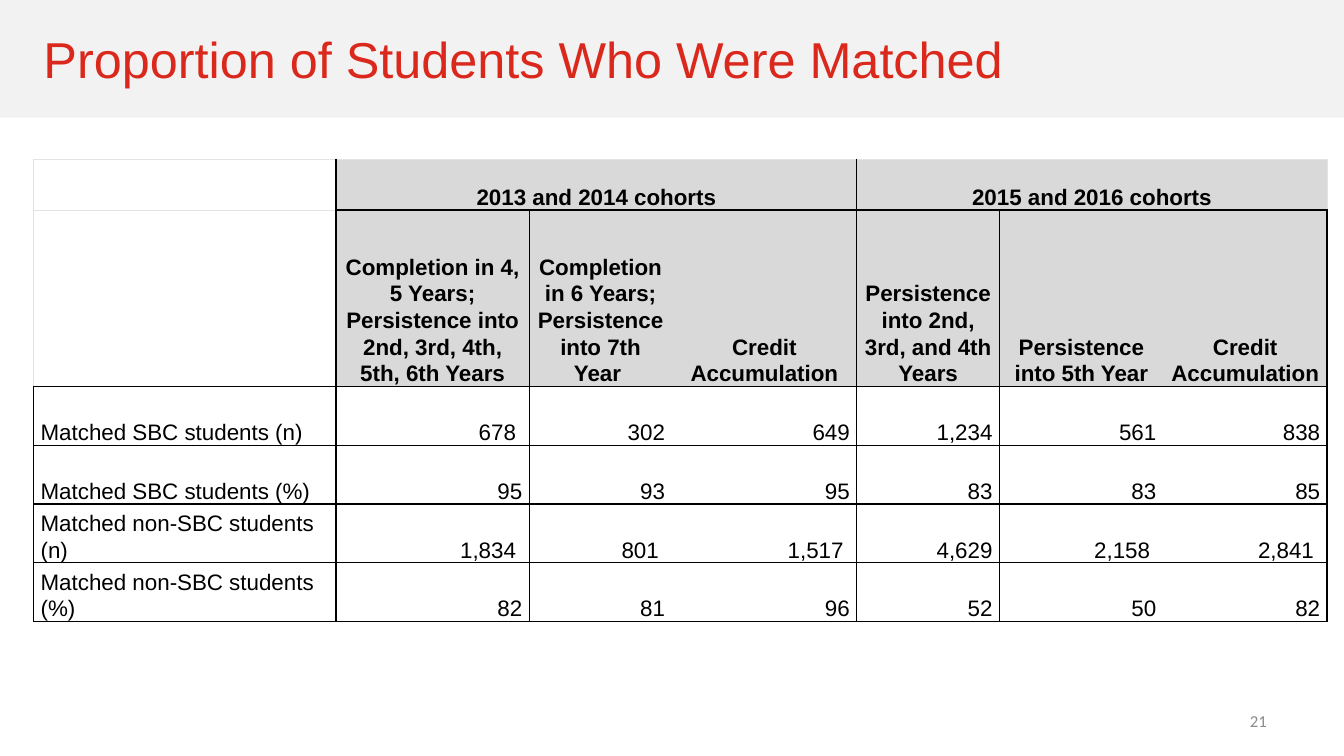
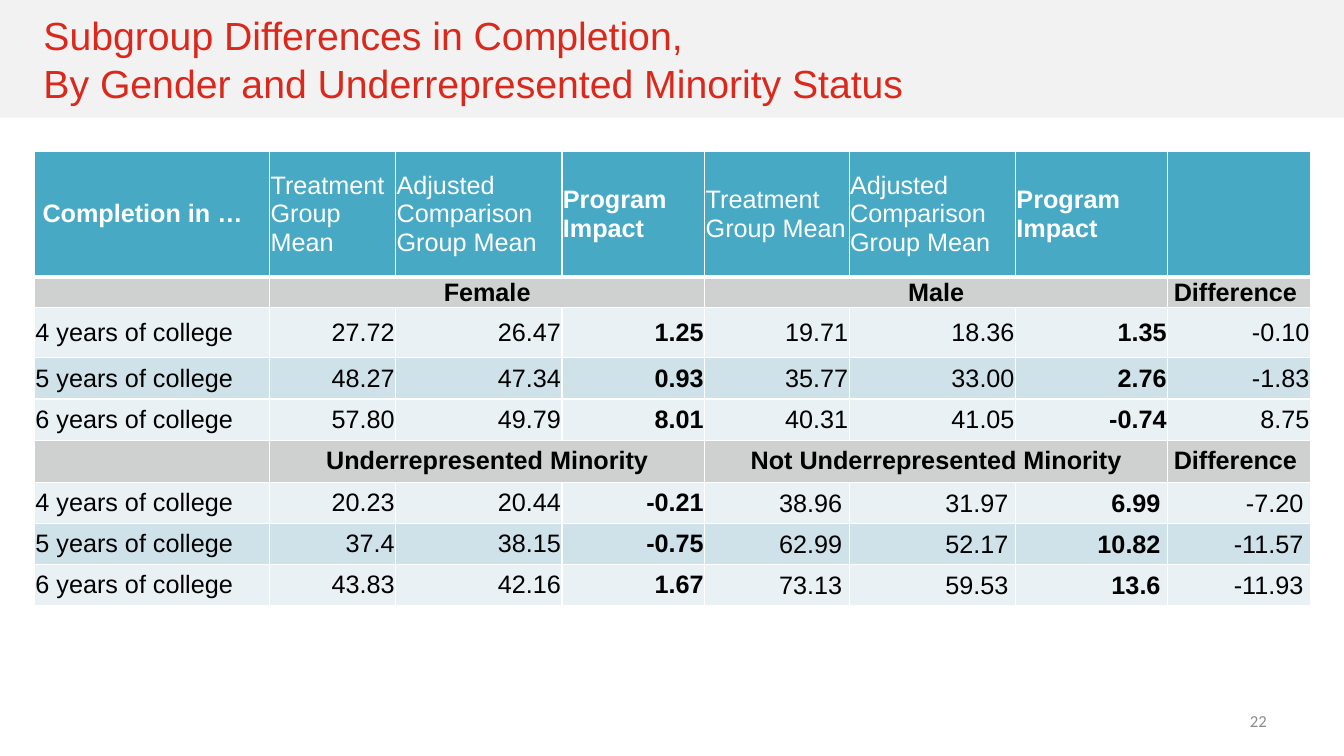
import lxml.etree
import pptx
import pptx.dml.color
import pptx.enum.shapes
import pptx.enum.text
import pptx.oxml.ns
import pptx.util

RGBColor = pptx.dml.color.RGBColor
ALIGN = pptx.enum.text.PP_ALIGN
ANCHOR = pptx.enum.text.MSO_ANCHOR

RED = RGBColor(0xDA, 0x29, 0x1C)
TEAL = RGBColor(0x48, 0xA9, 0xC5)
BLACK = RGBColor(0, 0, 0)
WHITE = RGBColor(0xFF, 0xFF, 0xFF)
BAND_GRAY = RGBColor(0xF2, 0xF2, 0xF2)
HEADER_GRAY = RGBColor(0xD9, 0xD9, 0xD9)
SECTION_GRAY = RGBColor(0xCF, 0xD1, 0xD1)
LINE_GRAY = RGBColor(0xE2, 0xE3, 0xE3)
NUMBER_GRAY = RGBColor(0x8C, 0x8C, 0x8C)
PALE_BLUE = RGBColor(0xE9, 0xF1, 0xF5)
SOFT_BLUE = RGBColor(0xCF, 0xE2, 0xEA)

COLUMNS, ROWS = 160, 90
THIN, MEDIUM, THICK = (LINE_GRAY, 0.75), (BLACK, 1), (WHITE, 3)

MATCHED_ROWS = [
    ["", "2013 and 2014 cohorts", None, None, "2015 and 2016 cohorts", None, None],
    ["", "Completion in 4, 5 Years; Persistence into 2nd, 3rd, 4th, 5th, 6th Years",
     "Completion in 6 Years;\nPersistence into 7th Year ", "Credit Accumulation",
     "Persistence into 2nd, 3rd, and 4th Years", "Persistence into 5th Year",
     "Credit Accumulation"],
    ["Matched SBC students (n)", "678 ", "302", "649", "1,234", "561", "838"],
    ["Matched SBC students (%)", "95", "93", "95", "83", "83", "85"],
    ["Matched non-SBC students (n)", "1,834 ", "801 ", "1,517 ", "4,629", "2,158 ", "2,841 "],
    ["Matched non-SBC students (%)", "82", "81", "96", "52", "50", "82"],
]
GROUP_HEADINGS = ["Treatment Group Mean", "Adjusted Comparison Group Mean", "Program Impact"]
COMPLETION_ROWS = [
    ["Completion in …", *GROUP_HEADINGS, *GROUP_HEADINGS, ""],
    ["", "Female", None, None, "Male", None, None, "Difference "],
    ["4 years of college", "27.72", "26.47", "1.25", "19.71", "18.36", "1.35", "-0.10"],
    ["5 years of college", "48.27", "47.34", "0.93", "35.77", "33.00", "2.76", "-1.83"],
    ["6 years of college", "57.80", "49.79", "8.01", "40.31", "41.05", "-0.74", "8.75"],
    ["", "Underrepresented Minority", None, None, "Not Underrepresented Minority",
     None, None, "Difference "],
    ["4 years of college", "20.23", "20.44", "-0.21", "38.96", "31.97", "6.99", "-7.20"],
    ["5 years of college", "37.4", "38.15", "-0.75", "62.99", "52.17", "10.82", "-11.57"],
    ["6 years of college", "43.83", "42.16", "1.67", "73.13", "59.53", "13.6", "-11.93"],
]
SECTION_ROWS = (1, 5)
IMPACT_COLUMNS = (3, 6)


def set_attributes(target, values):
    for name, value in values.items():
        setattr(target, name, value)


def set_border(cell, side, line):
    """Draw one side (L, R, T or B) as (colour, points), or clear it for None."""
    properties = cell._tc.get_or_add_tcPr()
    qn = pptx.oxml.ns.qn
    border = lxml.etree.SubElement(properties, qn(f"a:ln{side}"))
    if line is None:
        lxml.etree.SubElement(border, qn("a:noFill"))
        return
    color, points = line
    border.set("w", str(int(pptx.util.Pt(points))))
    fill = lxml.etree.SubElement(border, qn("a:solidFill"))
    lxml.etree.SubElement(fill, qn("a:srgbClr")).set("val", str(color))


class Deck:
    """Holds the shared style and the current slide; lengths are grid units."""

    def __init__(self):
        self.presentation = pptx.Presentation()
        set_attributes(self.presentation, {
            "slide_width": pptx.util.Inches(40 / 3),
            "slide_height": pptx.util.Inches(7.5),
        })
        self.slide = None

    def across(self, columns):
        return round(self.presentation.slide_width * columns / COLUMNS)

    def down(self, rows):
        return round(self.presentation.slide_height * rows / ROWS)

    def box(self, left, top, width, height):
        return self.across(left), self.down(top), self.across(width), self.down(height)

    def add_slide(self, title, title_size, number):
        layout = self.presentation.slide_layouts[6]
        self.slide = self.presentation.slides.add_slide(layout)
        self.band()
        self.text(title, (4, 2, 144, 10), {"size": title_size, "color": RED})
        self.text(number, (115, 83.4, 37, 4.8), {
            "size": 12, "name": "Calibri", "color": NUMBER_GRAY, "alignment": ALIGN.RIGHT})

    def band(self):
        shape = self.slide.shapes.add_shape(
            pptx.enum.shapes.MSO_SHAPE.RECTANGLE, *self.box(0, 0, COLUMNS, 14))
        shape.shadow.inherit = False
        shape.fill.solid()
        shape.fill.fore_color.rgb = BAND_GRAY
        shape.line.fill.background()

    def text(self, text, place, style):
        frame = self.slide.shapes.add_textbox(*self.box(*place)).text_frame
        set_attributes(frame, {"word_wrap": True, "vertical_anchor": ANCHOR.MIDDLE})
        self.fill_frame(frame, text, style)

    def fill_frame(self, frame, text, style):
        frame.text = text
        for paragraph in frame.paragraphs:
            set_attributes(paragraph, {
                "alignment": style.get("alignment", ALIGN.LEFT),
                "line_spacing": style.get("spacing", 1.0),
            })
            for run in paragraph.runs:
                set_attributes(run.font, {
                    "size": pptx.util.Pt(style["size"]),
                    "name": style.get("name", "Arial"),
                    "bold": style.get("bold", False),
                })
                run.font.color.rgb = style["color"]

    def table(self, place, widths, heights, rows, cell_style, vertical, horizontal):
        """The last three arguments give a cell's style and the lines of its edges."""
        table = self.slide.shapes.add_table(
            len(rows), len(widths), *self.box(*place, sum(widths), sum(heights))).table
        set_attributes(table, {"first_row": False, "horz_banding": False})
        for column, width in zip(table.columns, widths):
            column.width = self.across(width)
        for row, height in zip(table.rows, heights):
            row.height = self.down(height)
        for row, texts in enumerate(rows):
            for column, text in enumerate(texts):
                if text is None:
                    continue
                span = 1
                while column + span < len(texts) and texts[column + span] is None:
                    span += 1
                cell = table.cell(row, column)
                if span > 1:
                    cell.merge(table.cell(row, column + span - 1))
                set_border(cell, "L", vertical(row, column))
                set_border(cell, "R", vertical(row, column + span))
                set_border(cell, "T", horizontal(row, column))
                set_border(cell, "B", horizontal(row + 1, column))
                self.fill_cell(cell, text, cell_style(row, column))

    def fill_cell(self, cell, text, style):
        left, right = style["margins"]
        set_attributes(cell, {
            "margin_left": pptx.util.Inches(left),
            "margin_right": pptx.util.Inches(right),
            "margin_top": 0,
            "margin_bottom": 0,
            "vertical_anchor": style["anchor"],
        })
        cell.fill.solid()
        cell.fill.fore_color.rgb = style["fill"]
        if text:
            self.fill_frame(cell.text_frame, text, style)
        else:
            end = cell.text_frame.paragraphs[0]._p.get_or_add_endParaRPr()
            end.set("sz", "1000")


def matched_style(row, column):
    style = {"size": 16, "color": BLACK, "spacing": 1.07, "margins": (0.07, 0.07),
             "anchor": ANCHOR.BOTTOM, "fill": WHITE}
    if column and row < 2:
        style.update(fill=HEADER_GRAY, bold=True, alignment=ALIGN.CENTER)
    elif column:
        style.update(alignment=ALIGN.RIGHT)
    return style


def matched_vertical(row, edge):
    if edge == 0:
        return THIN if row < 2 else MEDIUM
    if edge == 7:
        return THIN if row == 0 else MEDIUM
    if edge in (1, 4) or (edge in (2, 5) and row > 0):
        return MEDIUM
    return None


def matched_horizontal(edge, column):
    return THIN if edge == 0 or (edge == 1 and column == 0) else MEDIUM


def completion_style(row, column):
    style = {"size": 18, "color": BLACK, "margins": (0.01, 0.01), "anchor": ANCHOR.MIDDLE,
             "bold": column in IMPACT_COLUMNS}
    if row == 0:
        style.update(fill=TEAL, color=WHITE)
        if column == 0:
            style.update(bold=True, margins=(0.08, 0.01))
    elif row in SECTION_ROWS:
        style.update(fill=SECTION_GRAY, bold=True, alignment=ALIGN.CENTER)
    else:
        style.update(fill=SOFT_BLUE if row in (3, 7) else PALE_BLUE)
        if column:
            style.update(alignment=ALIGN.RIGHT)
        if row > SECTION_ROWS[-1] and column > 3:
            style.update(margins=(0.07, 0.07), spacing=1.07)
    return style


def completion_vertical(row, edge):
    return WHITE, 1


def completion_horizontal(edge, column):
    return THICK if edge == 1 else (WHITE, 1)


def main():
    deck = Deck()
    deck.add_slide("Proportion of Students Who Were Matched", 36, "21")
    deck.table((4, 19), [36, 23, 17, 22, 17, 19.5, 19.5], [6, 21] + [7] * 4,
               MATCHED_ROWS, matched_style, matched_vertical, matched_horizontal)

    deck.add_slide("Subgroup Differences in Completion, \v"
                   "By Gender and Underrepresented Minority Status", 28, "22")
    deck.table((4.1, 18), [28, 15, 19.8, 17, 17.2, 19.8, 18.1, 17],
               [15, 3.5, 6, 4.9, 4.9, 5, 4.9, 4.9, 4.9],
               COMPLETION_ROWS, completion_style, completion_vertical, completion_horizontal)
    deck.presentation.save("out.pptx")


if __name__ == "__main__":
    main()
